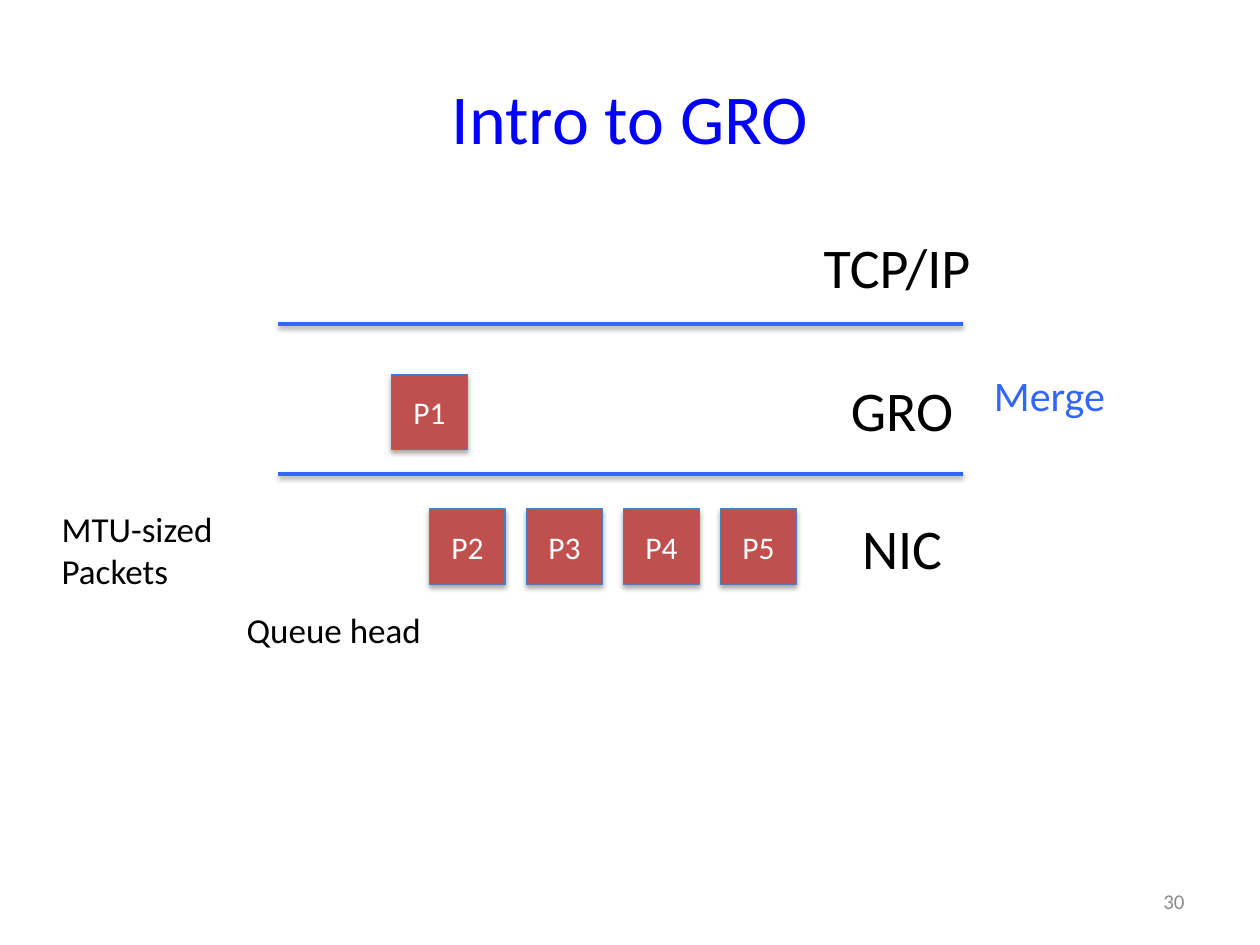
import lxml.etree
import pptx
import pptx.dml.color
import pptx.enum.shapes
import pptx.enum.text
import pptx.oxml.ns
import pptx.util

COLUMNS, ROWS = 100, 75
ALIGN = pptx.enum.text.PP_ALIGN
ANCHOR = pptx.enum.text.MSO_ANCHOR

THEME = {
    "font": "Calibri",
    "title": {"size": 40, "color": "0000FF"},
    "layer": {"size": 32, "color": "000000"},
    "action": {"size": 24, "color": "3366FF"},
    "note": {"size": 20, "color": "000000"},
    "packet": {"size": 18, "color": "FFFFFF"},
    "page": {"size": 12, "color": "8C8C8C"},
    "packet_fill": "C0504D",
    "packet_edge": ("4B7EBC", 0.75),
    "boundary": ("3366FF", 2),
    "packet_shadow": {"alpha": 35, "blur": 3.1, "distance": 1.8},
    "boundary_shadow": {"alpha": 38, "blur": 3.1, "distance": 1.6},
}

LABELS = [
    (["Intro to GRO"], "title", (5, 3, 90, 12.5), ALIGN.CENTER, ANCHOR.MIDDLE),
    (["MTU-sized", "Packets"], "note", (3.9, 39.8, 14.2, 7.7), ALIGN.LEFT, ANCHOR.TOP),
    (["Queue head"], "note", (18.6, 47.8, 16, 4.4), ALIGN.LEFT, ANCHOR.TOP),
    (["Merge"], "action", (77.9, 28.8, 19, 5), ALIGN.LEFT, ANCHOR.TOP),
    (["30"], "page", (71.7, 69.5, 23.3, 4), ALIGN.RIGHT, ANCHOR.MIDDLE),
]
LAYERS = [("TCP/IP", 71.2, 18), ("GRO", 71.6, 29.3), ("NIC", 71.6, 40.3)]
LAYER_WIDTH, LAYER_HEIGHT = 16, 6.4

BOUNDARY_ROWS = [25.7, 37.6]
BOUNDARY_START, BOUNDARY_END = 22.1, 76.4

MERGING = ("P1", 31.1, 29.7)
QUEUE = ["P2", "P3", "P4", "P5"]
QUEUE_LEFT, QUEUE_TOP, QUEUE_STEP = 34.1, 40.4, 7.7
PACKET_SIDE = 6

deck = pptx.Presentation()
deck.slide_width = pptx.util.Inches(10)
deck.slide_height = pptx.util.Inches(7.5)
slide = deck.slides.add_slide(deck.slide_layouts[6])


def rgb(color):
    return pptx.dml.color.RGBColor.from_string(color)


def on_grid(x, y):
    return round(x * deck.slide_width / COLUMNS), round(y * deck.slide_height / ROWS)


def place(box):
    return on_grid(*box[:2]) + on_grid(*box[2:])


def apply(target, values):
    for name, value in values.items():
        setattr(target, name, value)


def write(shape, lines, style, align, anchor, wrap=True):
    frame = shape.text_frame
    apply(frame, {"word_wrap": wrap, "vertical_anchor": anchor})
    frame.text = "\n".join(lines)
    for paragraph in frame.paragraphs:
        paragraph.alignment = align
        apply(paragraph.runs[0].font, {
            "name": THEME["font"], "size": pptx.util.Pt(THEME[style]["size"])})
        paragraph.runs[0].font.color.rgb = rgb(THEME[style]["color"])


def outline(shape, edge):
    color, width = edge
    shape.line.color.rgb = rgb(color)
    shape.line.width = pptx.util.Pt(width)


def cast_shadow(shape, shadow):
    qn = pptx.oxml.ns.qn
    properties = shape._element.spPr
    for old in properties.findall(qn("a:effectLst")):
        properties.remove(old)
    effects = lxml.etree.SubElement(properties, qn("a:effectLst"))
    outer = lxml.etree.SubElement(effects, qn("a:outerShdw"), {
        "blurRad": str(pptx.util.Pt(shadow["blur"])),
        "dist": str(pptx.util.Pt(shadow["distance"])),
        "dir": "5400000", "rotWithShape": "0"})
    color = lxml.etree.SubElement(outer, qn("a:srgbClr"), {"val": "000000"})
    lxml.etree.SubElement(color, qn("a:alpha"), {"val": str(shadow["alpha"] * 1000)})


def add_packet(name, left, top):
    packet = slide.shapes.add_shape(
        pptx.enum.shapes.MSO_SHAPE.RECTANGLE,
        *place((left, top, PACKET_SIDE, PACKET_SIDE)))
    packet.fill.solid()
    packet.fill.fore_color.rgb = rgb(THEME["packet_fill"])
    outline(packet, THEME["packet_edge"])
    cast_shadow(packet, THEME["packet_shadow"])
    write(packet, [name], "packet", ALIGN.CENTER, ANCHOR.MIDDLE)


for row in BOUNDARY_ROWS:
    boundary = slide.shapes.add_connector(
        pptx.enum.shapes.MSO_CONNECTOR.STRAIGHT,
        *on_grid(BOUNDARY_START, row), *on_grid(BOUNDARY_END, row))
    outline(boundary, THEME["boundary"])
    cast_shadow(boundary, THEME["boundary_shadow"])

for lines, style, box, align, anchor in LABELS:
    write(slide.shapes.add_textbox(*place(box)), lines, style, align, anchor)

for name, center, top in LAYERS:
    box = (center - LAYER_WIDTH / 2, top, LAYER_WIDTH, LAYER_HEIGHT)
    write(slide.shapes.add_textbox(*place(box)), [name], "layer", ALIGN.CENTER, ANCHOR.TOP)

add_packet(*MERGING)
for position, name in enumerate(QUEUE):
    add_packet(name, QUEUE_LEFT + position * QUEUE_STEP, QUEUE_TOP)

deck.save("out.pptx")
